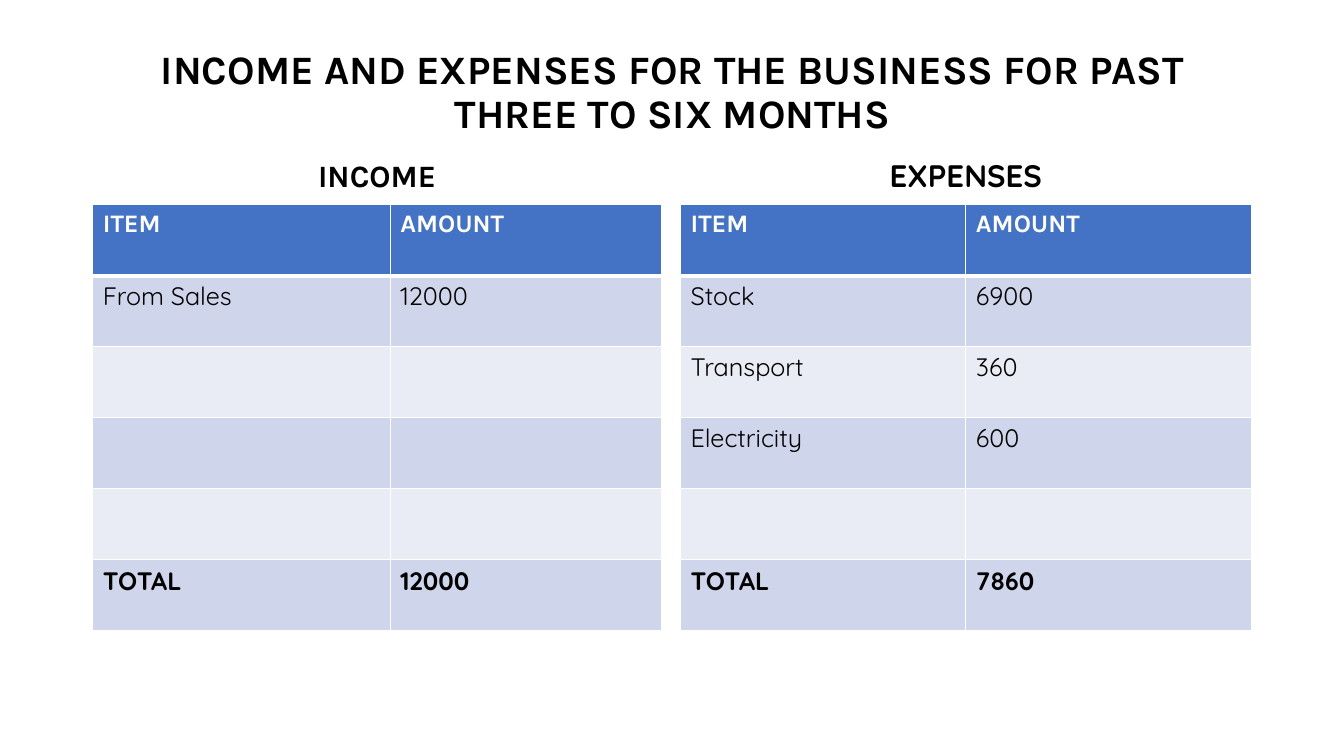
from lxml.etree import SubElement
from pptx import Presentation
from pptx.dml.color import RGBColor
from pptx.enum.text import MSO_ANCHOR, PP_ALIGN
from pptx.oxml.ns import qn
from pptx.util import Inches, Pt

# Content
TITLE = "INCOME AND EXPENSES FOR THE BUSINESS FOR PAST THREE TO SIX MONTHS"
HEADER = ("ITEM", "AMOUNT")
LEDGERS = [
    {"heading": "INCOME", "font": "Karla", "left": 0.92, "columns": (2.95, 2.69),
     "rows": [HEADER, ("From Sales", "12000"), ("", ""), ("", ""), ("", ""),
              ("TOTAL", "12000")]},
    {"heading": "EXPENSES", "font": "Quicksand", "left": 6.75, "columns": (2.83, 2.83),
     "rows": [HEADER, ("Stock", "6900"), ("Transport", "360"), ("Electricity", "600"),
              ("", ""), ("TOTAL", "7860")]},
]

# Style
BLACK = RGBColor(0x00, 0x00, 0x00)
WHITE = RGBColor(0xFF, 0xFF, 0xFF)
BLUE = RGBColor(0x44, 0x72, 0xC4)
BANDS = (RGBColor(0xE9, 0xEB, 0xF5), RGBColor(0xCF, 0xD5, 0xEA))
TABLE_TOP, ROW_HEIGHT = 2.03, 0.705


def add_span(para, text, size, font, color, bold):
    span = para.add_run()
    span.text = text
    span.font.size = Pt(size)
    span.font.name = font
    span.font.color.rgb = color
    span.font.bold = bold


def add_heading(page, area, text, size, font, spacing):
    box = page.shapes.add_textbox(*map(Inches, area))
    frame = box.text_frame
    frame.word_wrap = True
    frame.vertical_anchor = MSO_ANCHOR.MIDDLE
    para = frame.paragraphs[0]
    para.alignment = PP_ALIGN.CENTER
    para.line_spacing = spacing
    add_span(para, text, size, font, BLACK, True)


def set_borders(cell, top, bottom):
    cell_format = cell._tc.get_or_add_tcPr()
    widths = {"a:lnL": 1, "a:lnR": 1, "a:lnT": top, "a:lnB": bottom}
    for side, width in widths.items():
        line = SubElement(cell_format, qn(side), w=str(Pt(width)))
        fill = SubElement(line, qn("a:solidFill"))
        SubElement(fill, qn("a:srgbClr"), val=str(WHITE))


def fill_cell(cell, text, row, last_row):
    is_header = row == 0
    # Borders come before the fill in the cell properties
    set_borders(cell, 3 if row == 1 else 1, 3 if is_header else 1)
    cell.fill.solid()
    cell.fill.fore_color.rgb = BLUE if is_header else BANDS[row % 2]
    if text:
        add_span(cell.text_frame.paragraphs[0], text, 18,
                 "Karla" if is_header else "Quicksand",
                 WHITE if is_header else BLACK, row in (0, last_row))


def add_ledger(page, ledger):
    rows, columns, left = ledger["rows"], ledger["columns"], ledger["left"]
    width = sum(columns)
    add_heading(page, (left, 1.45, width, 0.65), ledger["heading"], 22.2,
                ledger["font"], 0.8)
    table = page.shapes.add_table(
        len(rows), len(columns), Inches(left), Inches(TABLE_TOP),
        Inches(width), Inches(ROW_HEIGHT * len(rows))).table
    for column, column_width in zip(table.columns, columns):
        column.width = Inches(column_width)
    for row, texts in enumerate(rows):
        table.rows[row].height = Inches(ROW_HEIGHT)
        for column, text in enumerate(texts):
            fill_cell(table.cell(row, column), text, row, len(rows) - 1)


def main():
    deck = Presentation()
    deck.slide_width, deck.slide_height = Inches(13.33), Inches(7.5)
    page = deck.slides.add_slide(deck.slide_layouts[6])
    add_heading(page, (0.92, 0.4, 11.5, 1.05), TITLE, 28.8, "Karla", 0.9)
    for ledger in LEDGERS:
        add_ledger(page, ledger)
    deck.save("out.pptx")


if __name__ == "__main__":
    main()
